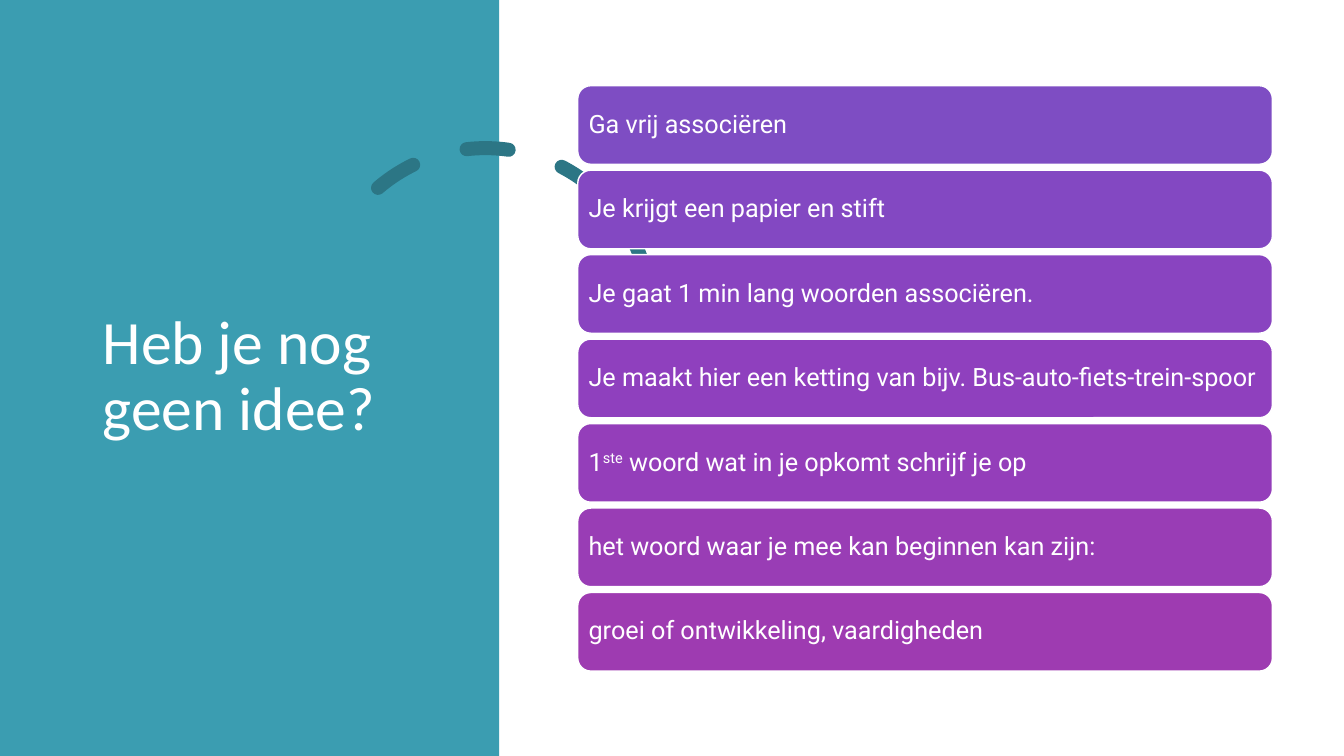
import pptx
import pptx.util
from pptx.dml.color import RGBColor
from pptx.enum.dml import MSO_LINE
from pptx.enum.shapes import MSO_SHAPE
from pptx.enum.text import MSO_ANCHOR, PP_ALIGN

TITLE = "Heb je nog geen idee?"
# Each step: bar colour, then (text, is superscript) runs
STEPS = [
    ("7E4DC3", [("Ga vrij associëren", False)]),
    ("8348C2", [("Je krijgt een papier en stift", False)]),
    ("8944C0", [("Je gaat 1 min lang woorden associëren.", False)]),
    ("8F40BE", [("Je maakt hier een ketting van bijv. Bus-auto-fiets-trein-spoor", False)]),
    ("943EBA", [("1", False), ("ste", True),
                (" woord wat in je opkomt schrijf je op", False)]),
    ("993DB5", [("het woord waar je mee kan beginnen kan zijn:", False)]),
    ("9E3BB1", [("groei of ontwikkeling, vaardigheden", False)]),
]
COLORS = {"panel": "3B9DB1", "arc": "2C7685", "white": "FFFFFF"}

WIDTH, HEIGHT = 13.33, 7.5
PANEL_WIDTH = 4.95
BAR_LEFT, BAR_TOP, BAR_WIDTH, BAR_HEIGHT = 5.73, 0.85, 6.89, 0.78
BAR_PITCH = 0.838
BAR_INSET = 0.11

inches, pt = pptx.util.Inches, pptx.util.Pt
rgb = RGBColor.from_string

prs = pptx.Presentation()
prs.slide_width, prs.slide_height = inches(WIDTH), inches(HEIGHT)
slide = prs.slides.add_slide(prs.slide_layouts[6])


def add_shape(kind, left, top, width, height, fill=None, line=None, weight=1):
    sp = slide.shapes.add_shape(kind, *map(inches, (left, top, width, height)))
    sp.shadow.inherit = False
    if fill:
        sp.fill.solid()
        sp.fill.fore_color.rgb = rgb(fill)
    else:
        sp.fill.background()
    if line:
        sp.line.color.rgb = rgb(line)
        sp.line.width = pt(weight)
    else:
        sp.line.fill.background()
    return sp


def write(sp, runs, font, size):
    """Fill a shape with one left-aligned, vertically centred paragraph."""
    tf = sp.text_frame
    tf.word_wrap = True
    tf.vertical_anchor = MSO_ANCHOR.MIDDLE
    p = tf.paragraphs[0]
    p.alignment = PP_ALIGN.LEFT
    p.line_spacing = 0.9
    for text, superscript in runs:
        r = p.add_run()
        r.text = text
        r.font.name, r.font.size = font, pt(size)
        r.font.color.rgb = rgb(COLORS["white"])
        if superscript:
            r.font._element.set("baseline", "30000")


add_shape(MSO_SHAPE.RECTANGLE, 0, 0, PANEL_WIDTH, HEIGHT, COLORS["panel"])

arc = add_shape(MSO_SHAPE.ARC, 3.18, 1.47, 3.27, 3.27, line=COLORS["arc"], weight=10)
arc.rotation = 345.8
arc.adjustments[0], arc.adjustments[1] = 146.13, 0
arc.line.dash_style = MSO_LINE.DASH
arc.line._ln.set("cap", "rnd")

title = slide.shapes.add_textbox(*map(inches, (0.92, 0.7, 3.23, 6.09)))
write(title, [(TITLE, False)], "Calibri", 44)

for row, (color, runs) in enumerate(STEPS):
    bar = add_shape(MSO_SHAPE.ROUNDED_RECTANGLE, BAR_LEFT, BAR_TOP + row * BAR_PITCH,
                    BAR_WIDTH, BAR_HEIGHT, color, COLORS["white"])
    write(bar, runs, "Roboto", 18)
    tf = bar.text_frame
    # The rounded corners add their own 0.04 inch to the text inset
    tf.margin_left = tf.margin_right = inches(BAR_INSET - 0.04)
    tf.margin_top = tf.margin_bottom = inches(BAR_INSET - 0.04)

prs.save("out.pptx")
